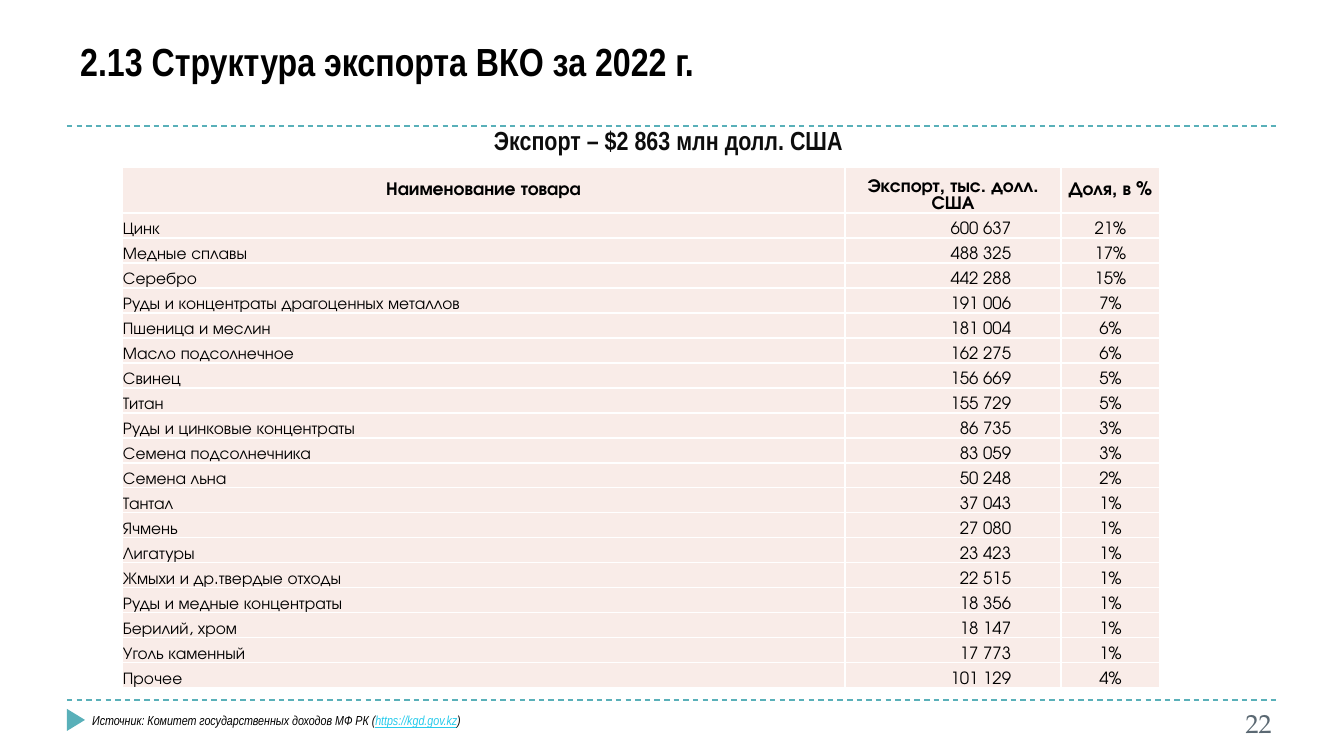
import pptx
import pptx.dml.color
import pptx.enum.dml
import pptx.enum.shapes
import pptx.enum.text
import pptx.oxml
import pptx.util
import lxml.etree

ALIGN = pptx.enum.text.PP_ALIGN
ANCHOR = pptx.enum.text.MSO_ANCHOR
SHAPE = pptx.enum.shapes.MSO_SHAPE
NS = "http://schemas.openxmlformats.org/drawingml/2006/main"
PX = 914400 / 134.4


def emu(*values):
    return [pptx.util.Emu(round(v * PX)) for v in values]


def style(font, name, size, color, bold=False, italic=False):
    font.name = name
    font.size = pptx.util.Pt(size)
    font.bold = bold
    font.italic = italic
    font.color.rgb = pptx.dml.color.RGBColor.from_string(color)


prs = pptx.Presentation()
prs.slide_width, prs.slide_height = emu(1344, 756)
s = prs.slides.add_slide(prs.slide_layouts[6])

for y in (700, 126):
    line = s.shapes.add_connector(
        pptx.enum.shapes.MSO_CONNECTOR.STRAIGHT, *emu(67, y, 1277, y))
    line.line.color.rgb = pptx.dml.color.RGBColor.from_string("59B0B9")
    line.line.width = pptx.util.Pt(0.75)
    line.line.dash_style = pptx.enum.dml.MSO_LINE.DASH
    lxml.etree.SubElement(line._element.spPr, f"{{{NS}}}effectLst")

sp = s.shapes.add_shape(SHAPE.ISOSCELES_TRIANGLE, *emu(65, 711, 22, 18))
sp.rotation = 90
sp.shadow.inherit = False
sp.fill.solid()
sp.fill.fore_color.rgb = pptx.dml.color.RGBColor.from_string("59B0B9")
sp.line.fill.background()

texts = [
    ((67, 16, 985, 75), ["2.13 Структура экспорта ВКО за 2022 г."],
     ("Arial Narrow", 21, "000000", True), ALIGN.LEFT, ANCHOR.BOTTOM, 7),
    ((1216, 700, 69, 40), ["22"],
     ("TeX Gyre Pagella", 14, "5B6973"), ALIGN.RIGHT, ANCHOR.TOP, 7),
    ((55, 124, 1227, 32), ["Экспорт – $2 863 млн долл. США"],
     ("Arial Narrow", 14, "0D0D0D", True), ALIGN.CENTER, ANCHOR.TOP, 0),
    ((79, 706, 1016, 29),
     ["Источник: Комитет государственных доходов МФ РК (", "https://kgd.gov.kz", ")"],
     ("Arial Narrow", 7, "000000", False, True), ALIGN.LEFT, ANCHOR.TOP, 7),
]
for box, runs, look, align, anchor, inset in texts:
    tf = s.shapes.add_textbox(*emu(*box)).text_frame
    tf.word_wrap = True
    tf.vertical_anchor = anchor
    tf.margin_top, tf.margin_bottom = emu(inset, inset)
    p = tf.paragraphs[0]
    p.alignment = align
    style(p.font, *look)
    for text in runs:
        r = p.add_run()
        r.text = text
        style(r.font, *look)
        if text.startswith("https"):
            r.font.underline = True
            r.font.color.rgb = pptx.dml.color.RGBColor.from_string("26CBEC")

rows = [
    ("Наименование товара", "Экспорт, тыс. долл. США", "Доля, в %"),
    ("Цинк", "600 637", "21%"),
    ("Медные сплавы", "488 325", "17%"),
    ("Серебро", "442 288", "15%"),
    ("Руды и концентраты драгоценных металлов", "191 006", "7%"),
    ("Пшеница и меслин", "181 004", "6%"),
    ("Масло подсолнечное", "162 275", "6%"),
    ("Свинец", "156 669", "5%"),
    ("Титан", "155 729", "5%"),
    ("Руды и цинковые концентраты", "86 735", "3%"),
    ("Семена подсолнечника", "83 059", "3%"),
    ("Семена льна", "50 248", "2%"),
    ("Тантал", "37 043", "1%"),
    ("Ячмень", "27 080", "1%"),
    ("Лигатуры", "23 423", "1%"),
    ("Жмыхи и др.твердые отходы", "22 515", "1%"),
    ("Руды и медные концентраты", "18 356", "1%"),
    ("Берилий, хром", "18 147", "1%"),
    ("Уголь каменный", "17 773", "1%"),
    ("Прочее", "101 129", "4%"),
]
table = s.shapes.add_table(len(rows), 3, *emu(122, 167, 1038, 521)).table
table.first_row = False
table.horz_banding = False
for column, width in zip(table.columns, emu(723, 216, 99)):
    column.width = width

for i, row in enumerate(rows):
    table.rows[i].height = emu(25 if i else 46)[0]
    for j, text in enumerate(row):
        cell = table.cell(i, j)
        right = 50 if i and j == 1 else 1
        cell.margin_left, cell.margin_top, cell.margin_right, cell.margin_bottom = emu(1, 1, right, 0)
        cell.vertical_anchor = ANCHOR.BOTTOM if i or j == 1 else ANCHOR.MIDDLE
        p = cell.text_frame.paragraphs[0]
        p.text = text
        p.alignment = (ALIGN.LEFT, ALIGN.RIGHT, ALIGN.CENTER)[j] if i else ALIGN.CENTER
        style(p.font, "TeX Gyre Adventor", 9 if i else 10, "000000", i == 0)
        for side in ("lnL", "lnR", "lnT", "lnB"):
            cell._tc.get_or_add_tcPr().append(pptx.oxml.parse_xml(
                f'<a:{side} xmlns:a="{NS}" w="12700"><a:solidFill>'
                f'<a:srgbClr val="FFFFFF"/></a:solidFill></a:{side}>'))
        cell.fill.solid()
        cell.fill.fore_color.rgb = pptx.dml.color.RGBColor.from_string("F9ECE8")

prs.save("out.pptx")
